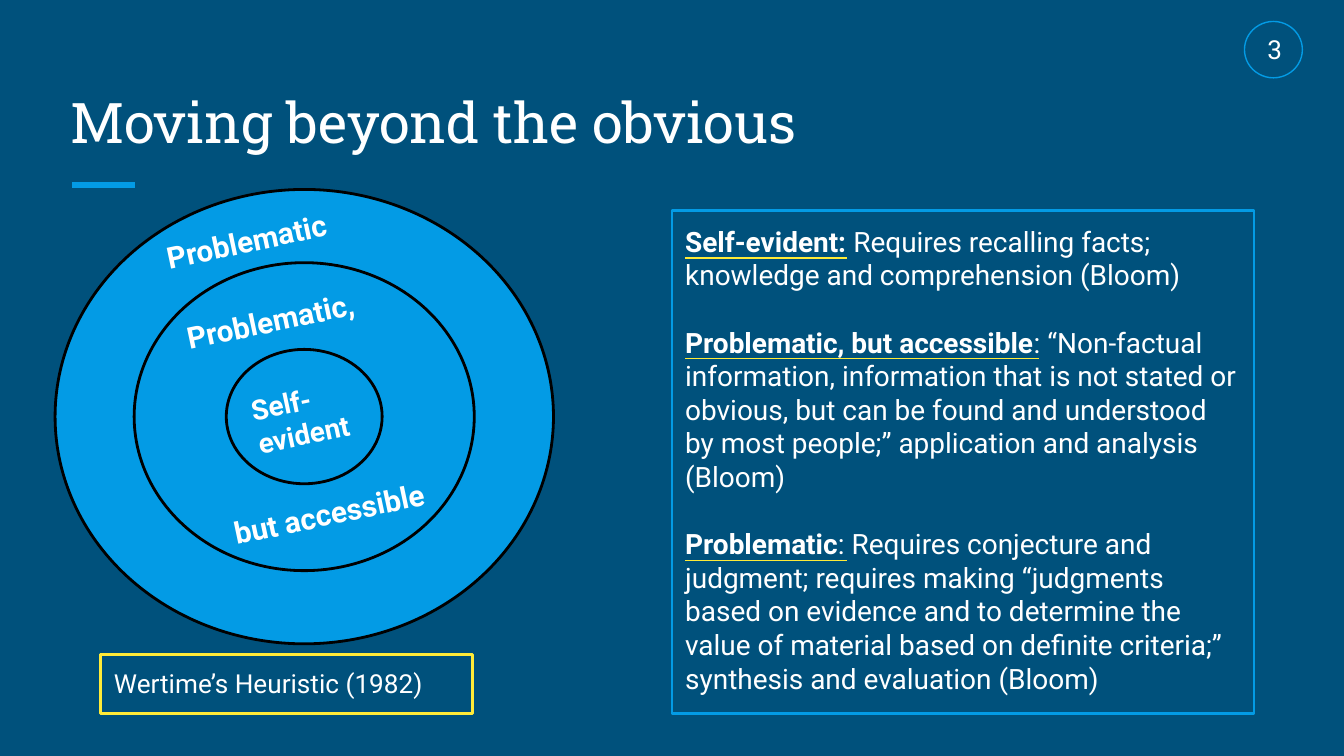
"""Build the slide on moving beyond the obvious, with its three nested rings."""
from lxml import etree
from pptx import Presentation
from pptx import util as u
from pptx.dml import color
from pptx.enum import shapes, text
from pptx.oxml import ns

NAVY, BLUE, YELLOW, WHITE, BLACK = "00517C", "039BE5", "FFEB38", "FFFFFF", "000000"


def rgb(value):
    return color.RGBColor.from_string(value)


def write(box, paras, size=14, font="Roboto", ink=WHITE, bold=False, gap=0,
          anchor=text.MSO_ANCHOR.TOP):
    """Fill a box with paragraphs, each a list of (text, bold) or a string."""
    frame = box.text_frame
    frame.word_wrap = True
    frame.vertical_anchor = anchor
    frame.margin_left = frame.margin_right = u.Pt(7.2)
    frame.margin_top = frame.margin_bottom = u.Pt(7.2)
    for index, spans in enumerate(paras):
        para = frame.add_paragraph() if index else frame.paragraphs[0]
        para.alignment = text.PP_ALIGN.LEFT
        para.space_before = u.Pt(gap if index else 0)
        for words, heavy in [(spans, bold)] if isinstance(spans, str) else spans:
            span = para.add_run()
            span.text = words
            span.font.name = font
            span.font.size = u.Pt(size)
            span.font.bold = heavy
            span.font.color.rgb = rgb(ink)


class Painter:
    def __init__(self, slide):
        self.page = slide
        self.page.background.fill.solid()
        self.page.background.fill.fore_color.rgb = rgb(NAVY)

    def shape(self, kind, left, top, width, height, line, weight, fill=None):
        shape = self.page.shapes.add_shape(
            kind, u.Pt(left), u.Pt(top), u.Pt(width), u.Pt(height))
        shape.shadow.inherit = False
        if fill:
            shape.fill.solid()
            shape.fill.fore_color.rgb = rgb(fill)
        else:
            shape.fill.background()
        shape.line.color.rgb = rgb(line)
        shape.line.width = u.Pt(weight)
        return shape

    def ellipse(self, center, width, height, line, weight, fill=None):
        x, y = center
        return self.shape(shapes.MSO_SHAPE.OVAL, x - width / 2, y - height / 2,
                          width, height, line, weight, fill)

    def frame(self, left, top, width, height, line, paras, **style):
        box = self.shape(shapes.MSO_SHAPE.RECTANGLE, left, top, width, height, line, 1.5)
        write(box, paras, **style)

    def label(self, left, top, width, height, paras, turn=0, **style):
        box = self.page.shapes.add_textbox(
            u.Pt(left), u.Pt(top), u.Pt(width), u.Pt(height))
        box.rotation = turn
        write(box, paras, **style)

    def rule(self, left, y, right, ink, weight):
        line = self.page.shapes.add_connector(
            shapes.MSO_CONNECTOR.STRAIGHT, u.Pt(left), u.Pt(y), u.Pt(right), u.Pt(y))
        line.line.color.rgb = rgb(ink)
        line.line.width = u.Pt(weight)
        etree.SubElement(line._element.spPr, ns.qn("a:effectLst"))


def main():
    deck = Presentation()
    deck.slide_width, deck.slide_height = u.Pt(720), u.Pt(405)
    painter = Painter(deck.slides.add_slide(deck.slide_layouts[6]))

    painter.rule(38.6, 99.2, 72.2, BLUE, 3)
    painter.label(30.6, 36, 659, 54, ["Moving beyond the obvious"], size=30,
                  font="Roboto Slab", anchor=text.MSO_ANCHOR.BOTTOM)
    painter.label(671.8, 10.8, 21, 31.7, ["3"])
    painter.ellipse((682.2, 26.6), 31, 30.2, BLUE, 0.75)

    for width, height in [(267, 243.4), (182.2, 165), (83.5, 72)]:
        painter.ellipse((163, 223.2), width, height, BLACK, 1.5, fill=BLUE)
    for left, top, width, height, size, paras in [
            (81.4, 111.6, 106.6, 33.8, 16, ["Problematic"]),
            (92.2, 154.8, 106.6, 33.8, 16, ["Problematic,"]),
            (117.4, 257.8, 121, 33.8, 16, ["but accessible"]),
            (128.9, 198, 67.7, 51.1, 15, ["Self-", "evident"])]:
        painter.label(left, top, width, height, paras, turn=348, size=size, bold=True)

    painter.frame(54, 350.6, 199.4, 31.7, YELLOW, ["Wertime’s Heuristic (1982)"])
    painter.frame(360, 113, 311.8, 269.3, BLUE, [
        [("Self-evident: ", True),
         ("Requires recalling facts; knowledge and comprehension (Bloom)", False)],
        [("Problematic, but accessible", True),
         (": “Non-factual information, information that is not stated or obvious, "
          "but can be found and understood by most people;” application and "
          "analysis (Bloom)", False)],
        [("Problematic", True),
         (": Requires conjecture and judgment; requires making “judgments based on "
          "evidence and to determine the value of material based on definite "
          "criteria;” synthesis and evaluation (Bloom)", False)],
    ], size=15, gap=18)
    for y, right in [(138.2, 453.6), (192.2, 556.6), (300.2, 453.6)]:
        painter.rule(367.2, y, right, YELLOW, 0.75)

    deck.save("out.pptx")


if __name__ == "__main__":
    main()
